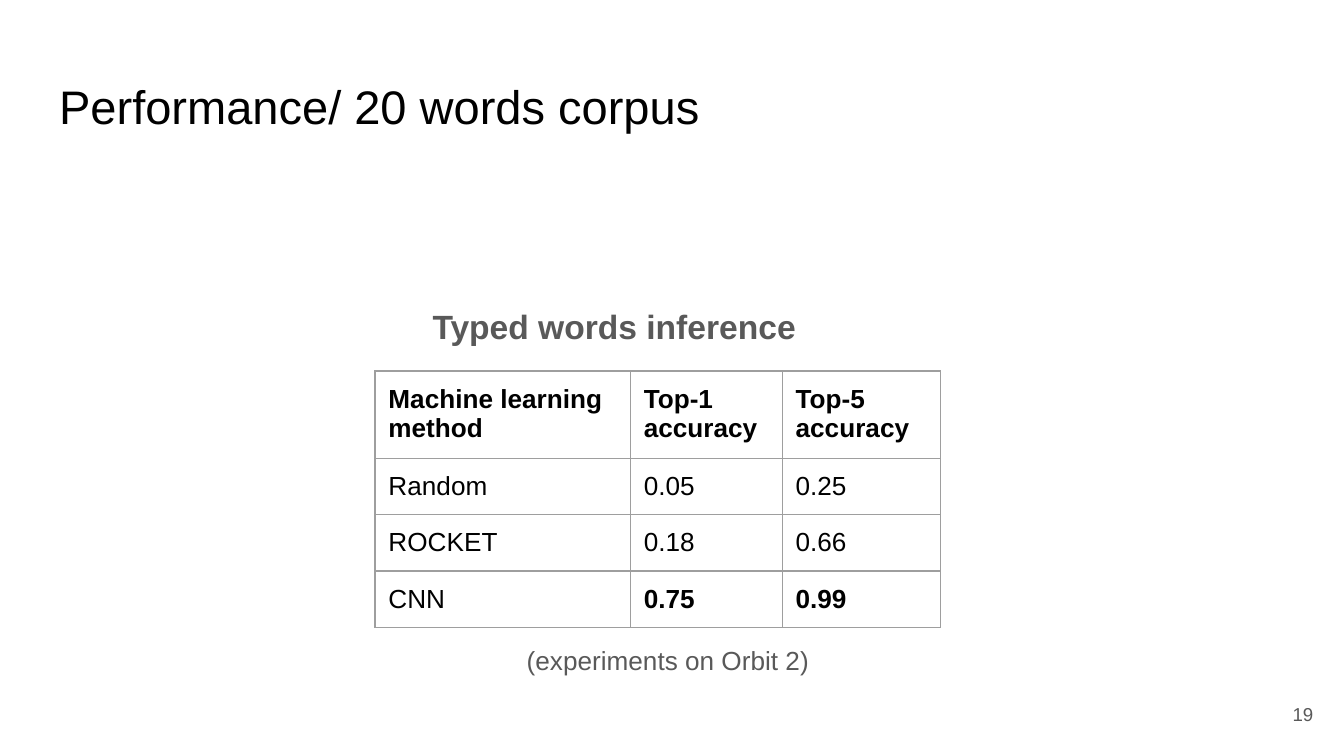
from dataclasses import dataclass

from pptx import Presentation
from pptx.dml.color import RGBColor
from pptx.enum.text import MSO_ANCHOR, PP_ALIGN
from pptx.oxml import parse_xml
from pptx.oxml.ns import nsdecls
from pptx.util import Inches, Pt


@dataclass(frozen=True)
class Theme:
    font: str = "Arial"
    ink: str = "000000"
    muted: str = "595959"
    rule: str = "9E9E9E"
    paper: str = "FFFFFF"
    title: float = 25.2
    head: float = 18
    body: float = 14
    small: float = 10
    pad: float = 0.1
    line: float = 0.75


THEME = Theme()

ROWS = [
    ("Machine learning method", "Top-1 accuracy", "Top-5 accuracy"),
    ("Random", "0.05", "0.25"),
    ("ROCKET", "0.18", "0.66"),
    ("CNN", "0.75", "0.99"),
]
WIDTHS = (1.9, 1.13, 1.18)
HEIGHTS = (0.65, 0.42, 0.42, 0.42)


def style(para, size, color, bold=False):
    font = para.font
    font.name, font.size, font.bold = THEME.font, Pt(size), bold
    font.color.rgb = RGBColor.from_string(color)


def inset(item):
    """Set equal margins on a text frame or table cell."""
    for side in ("left", "top", "right", "bottom"):
        setattr(item, f"margin_{side}", Inches(THEME.pad))


def add_title(slide, box, text):
    title = slide.shapes.title
    title.left, title.top, title.width, title.height = map(Inches, box)
    frame = title.text_frame
    frame.text = text
    frame.word_wrap = True
    frame.vertical_anchor = MSO_ANCHOR.TOP
    inset(frame)
    para = frame.paragraphs[0]
    para.alignment = PP_ALIGN.LEFT
    style(para, THEME.title, THEME.ink)


def add_text(slide, box, text, size, bold=False):
    frame = slide.shapes.add_textbox(*map(Inches, box)).text_frame
    frame.text = text
    frame.word_wrap = True
    inset(frame)
    para = frame.paragraphs[0]
    style(para, size, THEME.muted, bold)
    return frame, para


def add_label(slide, box, text, size, bold=False):
    para = add_text(slide, box, text, size, bold)[1]
    para.line_spacing = 1.15
    para.space_after = Pt(12)


def add_number(slide, box, text):
    frame, para = add_text(slide, box, text, THEME.small)
    frame.vertical_anchor = MSO_ANCHOR.MIDDLE
    para.alignment = PP_ALIGN.RIGHT


def add_border(cell):
    props = cell._tc.get_or_add_tcPr()
    for i, side in enumerate(("lnL", "lnR", "lnT", "lnB")):
        props.insert(i, parse_xml(
            f'<a:{side} {nsdecls("a")} w="{Pt(THEME.line)}"><a:solidFill>'
            f'<a:srgbClr val="{THEME.rule}"/></a:solidFill></a:{side}>'))


def add_scores(slide, left, top):
    """Place the accuracy table, with its header and best scores in bold."""
    box = (left, top, sum(WIDTHS), sum(HEIGHTS))
    table = slide.shapes.add_table(
        len(ROWS), len(WIDTHS), *map(Inches, box)).table
    for col, width in zip(table.columns, WIDTHS):
        col.width = Inches(width)
    for row, height in zip(table.rows, HEIGHTS):
        row.height = Inches(height)
    last = len(ROWS) - 1
    for r, row in enumerate(ROWS):
        for c, text in enumerate(row):
            cell = table.cell(r, c)
            cell.text = text
            inset(cell)
            cell.fill.solid()
            cell.fill.fore_color.rgb = RGBColor.from_string(THEME.paper)
            add_border(cell)
            bold = r == 0 or (r == last and c > 0)
            style(cell.text_frame.paragraphs[0], THEME.body, THEME.ink, bold)


def main():
    deck = Presentation()
    deck.slide_width = Inches(10)
    deck.slide_height = deck.slide_width * 9 // 16
    slide = deck.slides.add_slide(deck.slide_layouts[5])
    add_title(slide, (0.34, 0.48, 9.32, 0.63), "Performance/ 20 words corpus")
    add_scores(slide, 2.79, 2.76)
    add_label(slide, (3.12, 2.13, 3.98, 0.5), "Typed words inference",
              THEME.head, bold=True)
    add_label(slide, (3.82, 4.66, 3.28, 0.44), "(experiments on Orbit 2)",
              THEME.body)
    add_number(slide, (9.27, 5.1, 0.6, 0.43), "19")
    deck.save("out.pptx")


if __name__ == "__main__":
    main()
